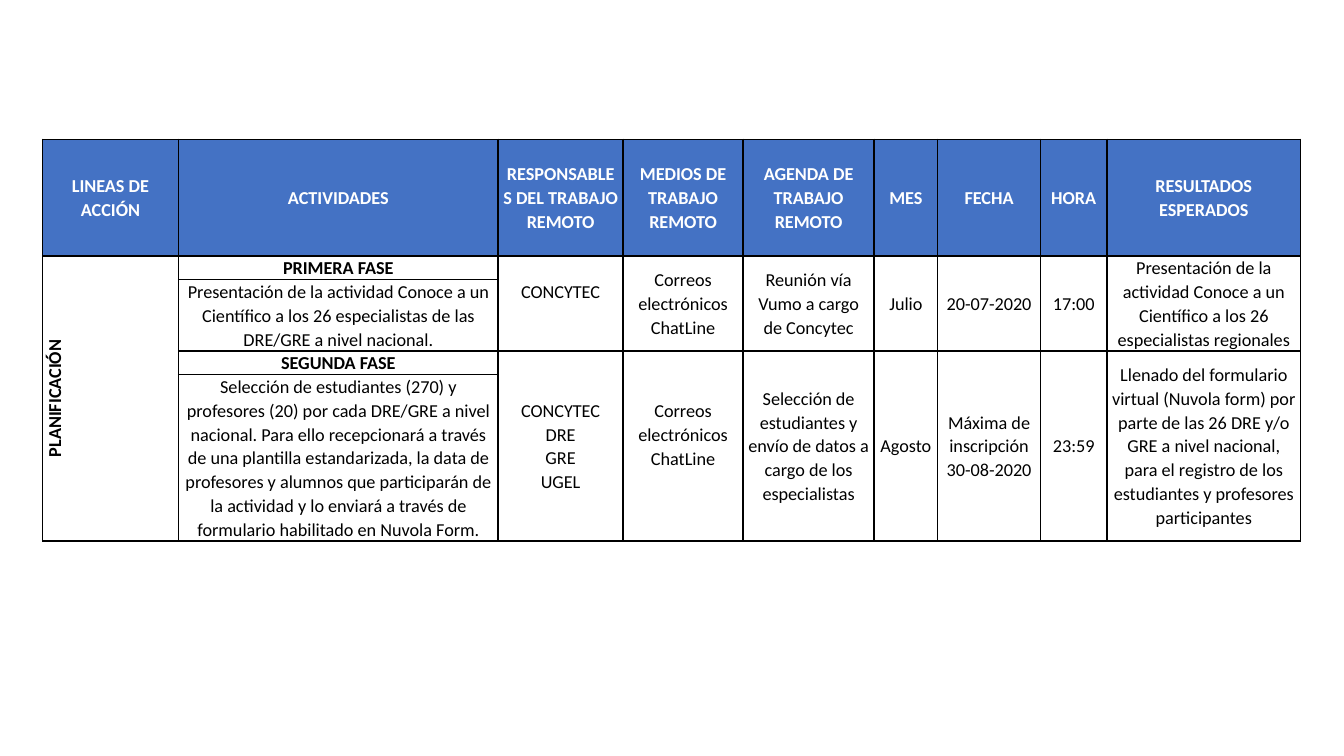
from lxml import etree
from pptx import Presentation
from pptx.dml.color import RGBColor
from pptx.enum.text import MSO_ANCHOR as Anchor, PP_ALIGN as Align
from pptx.oxml.ns import qn
from pptx.util import Inches, Pt

HEADER_FILL, BODY_FILL = "4472C4", "FFFFFF"
HEADER_TEXT, BODY_TEXT = "FFFFFF", "000000"
HALF_LINE_RAISE = 0.23
COLUMN_WIDTHS = [1.35, 3.17, 1.24, 1.19, 1.3, 0.63, 1.02, 0.66, 1.92]
ROW_HEIGHTS = [1.16, 0.23, 0.7, 0.23, 1.62]

HEADERS = [
    "LINEAS DE ACCIÓN", "ACTIVIDADES", "RESPONSABLES DEL TRABAJO REMOTO",
    "MEDIOS DE TRABAJO REMOTO", "AGENDA DE TRABAJO REMOTO", "MES", "FECHA",
    "HORA", "RESULTADOS ESPERADOS",
]
# Each phase: title, activity, then the cells from the third column on.
PHASES = [
    ("PRIMERA FASE",
     "Presentación de la actividad Conoce a un Científico a los 26 especialistas "
     "de las DRE/GRE a nivel nacional.",
     ["CONCYTEC", "Correos electrónicos\nChatLine",
      "Reunión vía Vumo a cargo de Concytec", "Julio", "20-07-2020", "17:00",
      "Presentación de la actividad Conoce a un Científico a los 26 "
      "especialistas regionales"]),
    ("SEGUNDA FASE",
     "Selección de estudiantes (270) y profesores (20) por cada DRE/GRE a nivel "
     "nacional. Para ello recepcionará a través de una plantilla estandarizada, "
     "la data de profesores y alumnos que participarán de la actividad y lo "
     "enviará a través de formulario habilitado en Nuvola Form.",
     ["CONCYTEC\nDRE\nGRE\nUGEL", "Correos electrónicos\nChatLine",
      "Selección de estudiantes y envío de datos a cargo de los especialistas",
      "Agosto", "Máxima de inscripción\n30-08-2020", "23:59",
      "Llenado del formulario virtual (Nuvola form) por parte de las 26 DRE y/o "
      "GRE a nivel nacional, para el registro de los estudiantes y profesores "
      "participantes"]),
]
# Cells (row, column) whose text sits half a line above the middle.
RAISED_CELLS = [(1, 2), (3, 3)]


def color(value):
    return RGBColor.from_string(value)


def add_borders(cell):
    properties = cell._tc.get_or_add_tcPr()
    for side in ("lnL", "lnR", "lnT", "lnB"):
        line = etree.SubElement(properties, qn(f"a:{side}"), w=str(Pt(1)))
        fill = etree.SubElement(line, qn("a:solidFill"))
        etree.SubElement(fill, qn("a:srgbClr"), val="000000")


def style_cell(cell, fill):
    add_borders(cell)
    cell.fill.solid()
    cell.fill.fore_color.rgb = color(fill)
    cell.vertical_anchor = Anchor.MIDDLE
    cell.margin_left = cell.margin_right = Inches(0.05)
    cell.margin_top = cell.margin_bottom = 0


def write_cell(cell, text, bold=False, text_color=BODY_TEXT):
    """Write one centred paragraph per line of text."""
    frame = cell.text_frame
    for index, line in enumerate(text.split("\n")):
        para = frame.add_paragraph() if index else frame.paragraphs[0]
        para.alignment = Align.CENTER
        para.line_spacing = 1.07
        span = para.add_run()
        span.text = line
        span.font.name = "Calibri"
        span.font.size = Pt(13)
        span.font.bold = bold
        span.font.color.rgb = color(text_color)


def write_phase(table, top_row, title, activity, details):
    """Fill the two rows of a phase, merging all columns after the activity."""
    write_cell(table.cell(top_row, 1), title, bold=True)
    write_cell(table.cell(top_row + 1, 1), activity)
    for column, text in enumerate(details, start=2):
        cell = table.cell(top_row, column)
        cell.merge(table.cell(top_row + 1, column))
        write_cell(cell, text)


def add_plan_table(page, left, top):
    frame = page.shapes.add_table(
        len(ROW_HEIGHTS), len(COLUMN_WIDTHS), Inches(left), Inches(top),
        Inches(sum(COLUMN_WIDTHS)), Inches(sum(ROW_HEIGHTS)))
    table = frame.table
    table.horz_banding = False
    for column, width in zip(table.columns, COLUMN_WIDTHS):
        column.width = Inches(width)
    for index, (row, height) in enumerate(zip(table.rows, ROW_HEIGHTS)):
        row.height = Inches(height)
        for cell in row.cells:
            style_cell(cell, BODY_FILL if index else HEADER_FILL)

    for column, text in enumerate(HEADERS):
        write_cell(table.cell(0, column), text, bold=True, text_color=HEADER_TEXT)

    action_line = table.cell(1, 0)
    action_line.merge(table.cell(len(ROW_HEIGHTS) - 1, 0))
    action_line._tc.get_or_add_tcPr().set("vert", "vert270")
    write_cell(action_line, "PLANIFICACIÓN", bold=True)

    for index, phase in enumerate(PHASES):
        write_phase(table, 1 + 2 * index, *phase)
    for row, column in RAISED_CELLS:
        table.cell(row, column).margin_bottom = Inches(HALF_LINE_RAISE)


def main():
    deck = Presentation()
    deck.slide_width, deck.slide_height = Inches(13.33), Inches(7.5)
    page = deck.slides.add_slide(deck.slide_layouts[6])
    add_plan_table(page, 0.42, 1.38)
    deck.save("out.pptx")


if __name__ == "__main__":
    main()
